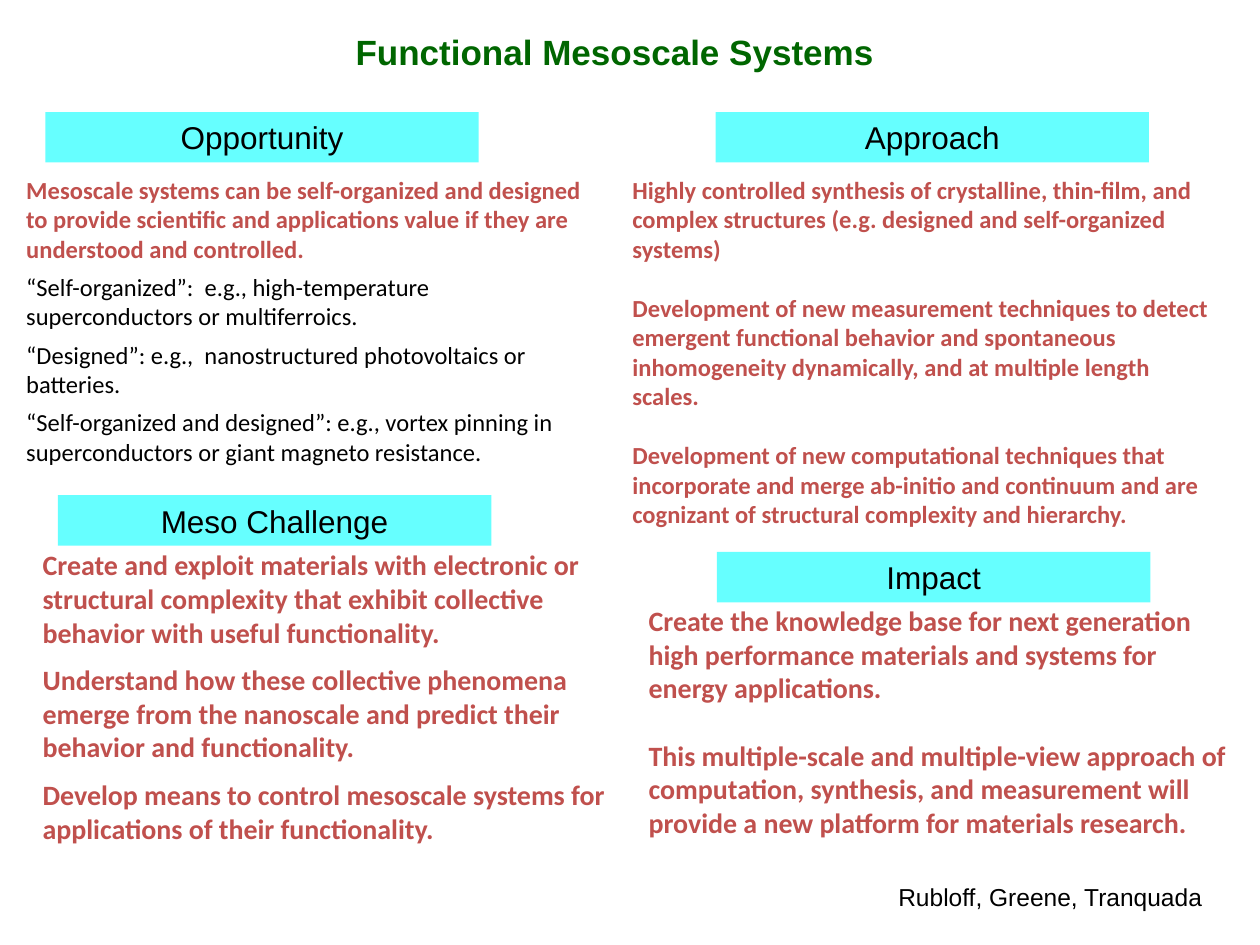
from pptx import Presentation
from pptx.dml.color import RGBColor
from pptx.enum import shapes, text
from pptx.util import Pt

HUES = {"title": "006600", "bar": "66FFFF", "key": "C0504D", "ink": "000000"}
BAR_W, BAR_H = 247.68, 28.8


def hue(name):
    return RGBColor.from_string(HUES[name])


def write(para, words, size, face="Calibri", color="key", bold=False):
    run = para.add_run()
    run.text = words
    font = run.font
    font.size, font.name, font.bold = Pt(size), face, bold
    font.color.rgb = hue(color)


def frame(slide, box, wrap=True):
    area = slide.shapes.add_textbox(*map(Pt, box)).text_frame
    area.word_wrap = wrap
    return area


def label(slide, box, words, size, color="ink", bold=False, center=False, wrap=True):
    para = frame(slide, box, wrap).paragraphs[0]
    if center:
        para.alignment = text.PP_ALIGN.CENTER
    write(para, words, size, "Arial", color, bold)


def bar(slide, left, top, words):
    rect = slide.shapes.add_shape(shapes.MSO_SHAPE.RECTANGLE,
                                  Pt(left), Pt(top), Pt(BAR_W), Pt(BAR_H))
    rect.shadow.inherit = False
    rect.fill.solid()
    rect.fill.fore_color.rgb = hue("bar")
    rect.line.fill.background()
    para = rect.text_frame.paragraphs[0]
    para.alignment = text.PP_ALIGN.CENTER
    write(para, words, 18, "Arial", "ink")


def section(slide, box, head, inset, drop, size, gap, keys, plain=()):
    """Heading bar, with the body starting a drop below the bar's top."""
    left, top, width, height = box
    bar(slide, left + inset, top, head)
    area = frame(slide, (left, top + drop, width, height - drop))
    items = [(words, True) for words in keys] + [(words, False) for words in plain]
    for i, (words, key) in enumerate(items):
        para = area.add_paragraph() if i else area.paragraphs[0]
        if i:
            para.space_before = Pt(gap)
        write(para, words, size, color="key" if key else "ink", bold=key)


def build():
    deck = Presentation()
    deck.slide_width, deck.slide_height = Pt(720), Pt(540)
    slide = deck.slides.add_slide(deck.slide_layouts[6])

    # Title
    label(slide, (22.3, 13.7, 658, 31.7), "Functional Mesoscale Systems",
          20, "title", bold=True, center=True)

    # Left column
    section(slide, (7.92, 64.1, 337.7, 207.4), "Opportunity", 18, 32.4, 14, 5,
            ["Mesoscale systems can be self-organized and designed to provide "
             "scientific and applications value if they are understood and controlled."],
            ["“Self-organized”:  e.g., high-temperature superconductors or multiferroics.",
             "“Designed”: e.g.,  nanostructured photovoltaics or batteries.",
             "“Self-organized and designed”: e.g., vortex pinning in superconductors "
             "or giant magneto resistance."])
    section(slide, (17.28, 283, 342, 208), "Meso Challenge", 15.8, 26.6, 16, 8,
            ["Create and exploit materials with electronic or structural complexity "
             "that exhibit collective behavior with useful functionality.",
             "Understand how these collective phenomena emerge from the nanoscale "
             "and predict their behavior and functionality.",
             "Develop means to control mesoscale systems for applications of their "
             "functionality."])

    # Right column
    section(slide, (354.24, 64.1, 347, 259.9), "Approach", 54.7, 32.4, 14, 17,
            ["Highly controlled synthesis of crystalline, thin-film, and complex "
             "structures (e.g. designed and self-organized systems)",
             "Development of new measurement techniques to detect emergent functional "
             "behavior and spontaneous inhomogeneity dynamically, and at multiple "
             "length scales.",
             "Development of new computational techniques that incorporate and merge "
             "ab-initio and continuum and are cognizant of structural complexity "
             "and hierarchy."])
    section(slide, (363.6, 315.4, 346.3, 169.2), "Impact", 46.1, 25.9, 16, 19.5,
            ["Create the knowledge base for next generation high performance "
             "materials and systems for energy applications.",
             "This multiple-scale and multiple-view approach of computation, "
             "synthesis, and measurement will provide a new platform for materials "
             "research."])

    # Authors
    label(slide, (506.2, 500.4, 188.6, 24.5), "Rubloff, Greene, Tranquada",
          14, wrap=False)
    deck.save("out.pptx")


if __name__ == "__main__":
    build()
